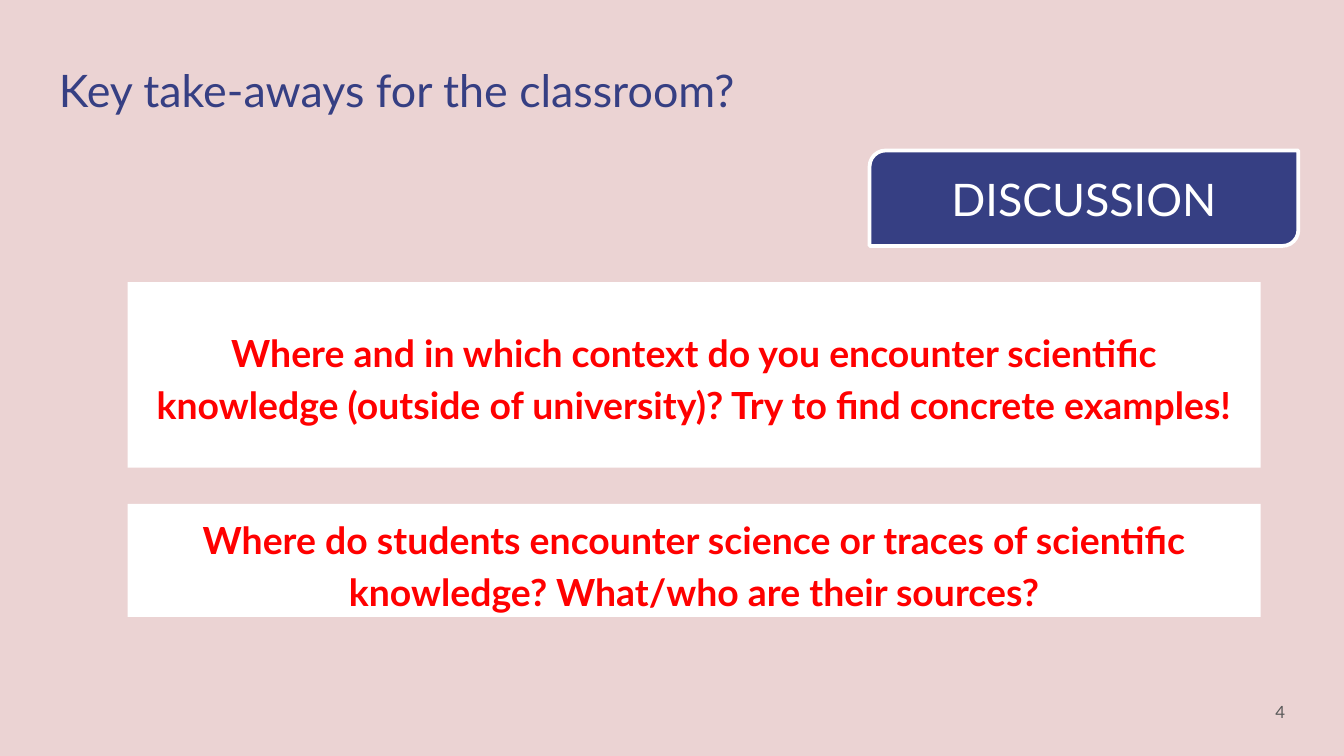
from pptx import Presentation
from pptx.dml.color import RGBColor
from pptx.enum.shapes import MSO_SHAPE
from pptx.enum.text import MSO_ANCHOR, PP_ALIGN
from pptx.util import Inches, Pt

ROSE = RGBColor(0xEB, 0xD3, 0xD3)
NAVY = RGBColor(0x36, 0x3F, 0x83)
RED = RGBColor(0xFF, 0x00, 0x00)
GRAY = RGBColor(0x59, 0x59, 0x59)
WHITE = RGBColor(0xFF, 0xFF, 0xFF)
FONT = "Lato"

TITLE = "Key take-aways for the classroom?"
LABEL = "DISCUSSION"
PAGE_NUMBER = "4"
# text, height of the box, vertical inset, anchor
QUESTIONS = [
    ("Where and in which context do you encounter scientific knowledge "
     "(outside of university)? Try to find concrete examples!",
     1.38, 0.1, MSO_ANCHOR.MIDDLE),
    ("Where do students encounter science or traces of scientific knowledge? "
     "What/who are their sources?",
     0.84, 0.05, MSO_ANCHOR.TOP),
]

SLIDE_WIDTH = 10
SLIDE_HEIGHT = SLIDE_WIDTH * 9 / 16
MARGIN = 0.34
RIGHT_EDGE = SLIDE_WIDTH - MARGIN
LABEL_WIDTH, NUMBER_WIDTH = 3.19, 0.6
QUESTION_LEFT, QUESTION_TOP, QUESTION_WIDTH = 0.95, 2.1, 8.43
QUESTION_GAP = 0.27


def set_text(shape, text, size, color, align, anchor, inset=0.1, bold=False, spacing=None):
    frame = shape.text_frame
    frame.word_wrap = True
    frame.vertical_anchor = anchor
    frame.margin_left = frame.margin_right = Inches(0.1)
    frame.margin_top = frame.margin_bottom = Inches(inset)
    frame.text = text
    paragraph = frame.paragraphs[0]
    paragraph.alignment = align
    paragraph.line_spacing = spacing
    font = paragraph.runs[0].font
    font.name, font.size, font.bold = FONT, Pt(size), bold
    font.color.rgb = color


def add_box(slide, kind, box, fill, line=None):
    shape = slide.shapes.add_shape(kind, *map(Inches, box))
    shape.shadow.inherit = False
    shape.fill.solid()
    shape.fill.fore_color.rgb = fill
    if line is None:
        shape.line.fill.background()
    else:
        shape.line.color.rgb = line
        shape.line.width = Pt(2)
    return shape


def add_text(slide, box, *style):
    set_text(slide.shapes.add_textbox(*map(Inches, box)), *style)


def main():
    presentation = Presentation()
    presentation.slide_width = Inches(SLIDE_WIDTH)
    presentation.slide_height = Inches(SLIDE_HEIGHT)
    slide = presentation.slides.add_slide(presentation.slide_layouts[6])
    slide.background.fill.solid()
    slide.background.fill.fore_color.rgb = ROSE

    add_text(slide, (MARGIN, 0.37, 7.44, 0.63),
             TITLE, 24, NAVY, PP_ALIGN.LEFT, MSO_ANCHOR.TOP)

    top = QUESTION_TOP
    for text, height, inset, anchor in QUESTIONS:
        question = add_box(slide, MSO_SHAPE.RECTANGLE,
                           (QUESTION_LEFT, top, QUESTION_WIDTH, height), WHITE)
        set_text(question, text, 20, RED, PP_ALIGN.CENTER, anchor,
                 inset, bold=True, spacing=1.15)
        top += height + QUESTION_GAP

    label = add_box(slide, MSO_SHAPE.ROUND_2_DIAG_RECTANGLE,
                    (RIGHT_EDGE - LABEL_WIDTH, 1.12, LABEL_WIDTH, 0.71), NAVY, WHITE)
    set_text(label, LABEL, 24, WHITE, PP_ALIGN.CENTER, MSO_ANCHOR.MIDDLE, 0.05)

    add_text(slide, (RIGHT_EDGE - NUMBER_WIDTH, 5.08, NUMBER_WIDTH, 0.43),
             PAGE_NUMBER, 9, GRAY, PP_ALIGN.RIGHT, MSO_ANCHOR.MIDDLE)

    presentation.save("out.pptx")


if __name__ == "__main__":
    main()
